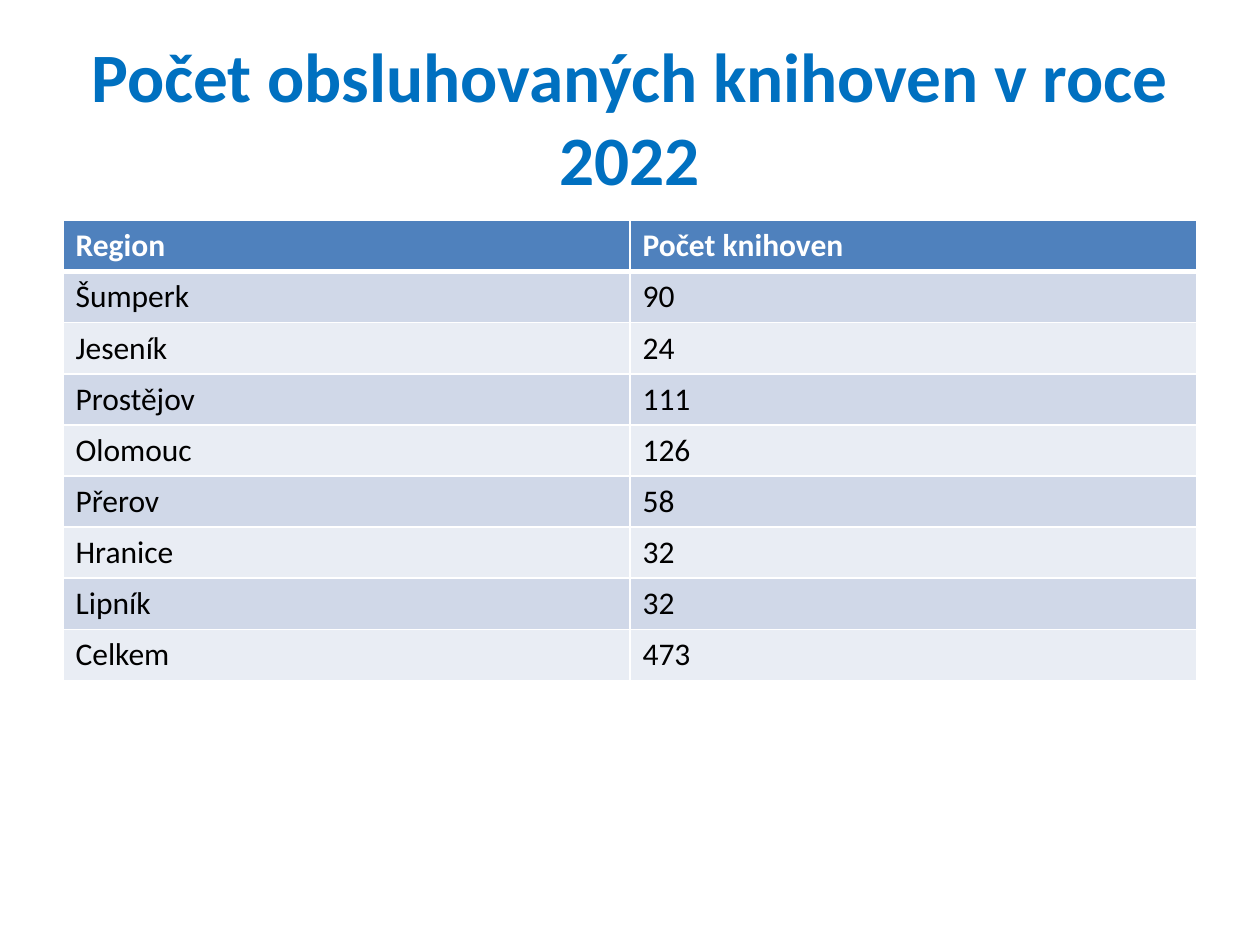
from typing import NamedTuple

from lxml.etree import SubElement
from pptx import Presentation
from pptx.dml.color import RGBColor
from pptx.enum.text import MSO_ANCHOR, PP_ALIGN
from pptx.oxml.ns import qn
from pptx.util import Inches, Pt

FONT = "Calibri"
BLUE = RGBColor(0x00, 0x70, 0xC0)
HEAD = RGBColor(0x4F, 0x81, 0xBD)
DARK = RGBColor(0xD0, 0xD8, 0xE8)
PALE = RGBColor(0xE9, 0xED, 0xF4)
WHITE = RGBColor(0xFF, 0xFF, 0xFF)
BLACK = RGBColor(0x00, 0x00, 0x00)


class Style(NamedTuple):
    size: float
    color: RGBColor
    bold: bool = False


class Row(NamedTuple):
    region: str
    count: str


TITLE = Style(39.6, BLUE, True)
LABEL = Style(18, WHITE, True)
BODY = Style(18, BLACK)

ROWS = [
    Row("Region", "Počet knihoven"),
    Row("Šumperk", "90"),
    Row("Jeseník", "24"),
    Row("Prostějov", "111"),
    Row("Olomouc", "126"),
    Row("Přerov", "58"),
    Row("Hranice", "32"),
    Row("Lipník", "32"),
    Row("Celkem", "473"),
]


def write(frame, text: str, style: Style) -> None:
    frame.text = text
    font = frame.paragraphs[0].font
    font.name, font.size = FONT, Pt(style.size)
    font.bold, font.color.rgb = style.bold, style.color


def edge(cell, side: str, width: float) -> None:
    props = cell._tc.get_or_add_tcPr()
    line = SubElement(props, qn(f"a:ln{side}"), w=str(Pt(width)))
    fill = SubElement(line, qn("a:solidFill"))
    SubElement(fill, qn("a:srgbClr"), val=str(WHITE))


def add_title(slide, text: str) -> None:
    box = slide.shapes.add_textbox(Inches(0.5), Inches(0.3), Inches(9), Inches(1.25))
    frame = box.text_frame
    frame.word_wrap = True
    frame.vertical_anchor = MSO_ANCHOR.MIDDLE
    write(frame, text, TITLE)
    frame.paragraphs[0].alignment = PP_ALIGN.CENTER


def add_grid(slide, rows: list[Row]) -> None:
    table = slide.shapes.add_table(
        len(rows), len(Row._fields),
        Inches(0.5), Inches(1.75), Inches(9), Inches(3.65),
    ).table
    for i, row in enumerate(rows):
        # A thick rule parts the header from the body
        top = 3 if i == 1 else 1
        base = 3 if i == 0 else 1
        tint = HEAD if i == 0 else DARK if i % 2 else PALE
        for j, text in enumerate(row):
            cell = table.cell(i, j)
            write(cell.text_frame, text, BODY if i else LABEL)
            for side, width in zip("LRTB", (1, 1, top, base)):
                edge(cell, side, width)
            cell.fill.solid()
            cell.fill.fore_color.rgb = tint


def main() -> None:
    deck = Presentation()
    deck.slide_width, deck.slide_height = Inches(10), Inches(7.5)
    slide = deck.slides.add_slide(deck.slide_layouts[6])

    # Title
    add_title(slide, "Počet obsluhovaných knihoven v roce 2022")

    # Libraries by region
    add_grid(slide, ROWS)

    deck.save("out.pptx")


if __name__ == "__main__":
    main()
